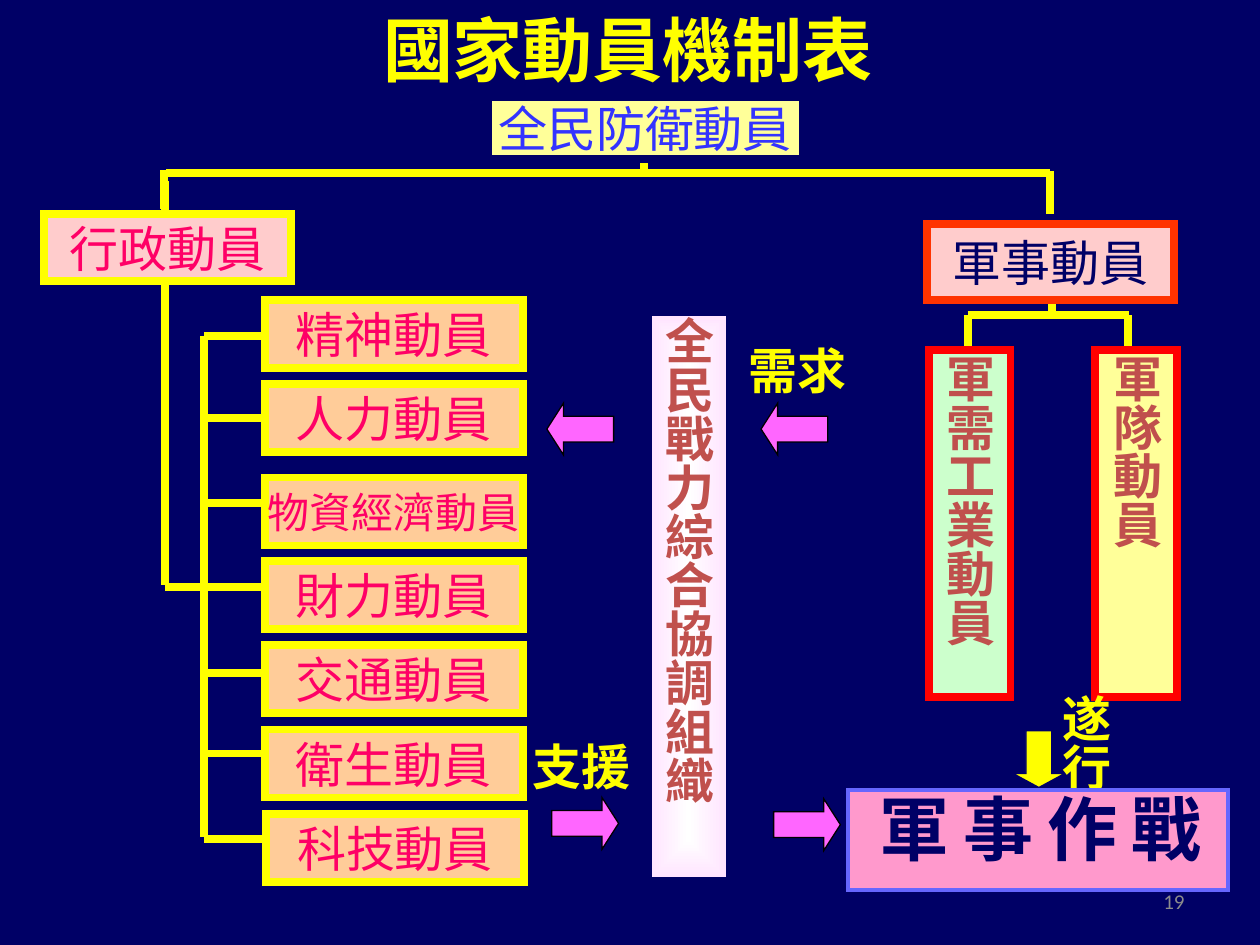
from lxml.etree import SubElement
from pptx import Presentation
from pptx.dml.color import RGBColor
from pptx.enum.shapes import MSO_CONNECTOR, MSO_SHAPE
from pptx.enum.text import MSO_ANCHOR, MSO_AUTO_SIZE, PP_ALIGN
from pptx.oxml.ns import qn
from pptx.util import Inches, Pt

# Content
TITLE = "國家動員機制表"
PAGE_NUMBER = "19"
YELLOW, NAVY, PINK, BRICK = "FFFF00", "000066", "FF0066", "C0504D"
BRANCH_SIZE = (2.05, 0.54)
SPINE_X = 1.62

# name, left, top, height of the joining line, text size
BRANCHES = [
    ("精神動員", 2.1, 2.38, 2.67, 28),
    ("人力動員", 2.1, 3.05, 3.32, 28),
    ("物資經濟動員", 2.1, 3.79, 3.99, 24),
    ("財力動員", 2.1, 4.45, None, 28),
    ("交通動員", 2.1, 5.12, 5.34, 28),
    ("衛生動員", 2.1, 5.79, 5.98, 28),
    ("科技動員", 2.11, 6.46, 6.66, 28),
]
# name, (left, top, width, height), fill, line, text colour
LEVEL_BOXES = [
    ("全民防衛動員", (3.87, 0.77, 2.5, 0.49), "FFFF99", NAVY, "3333FF"),
    ("行政動員", (0.35, 1.7, 1.96, 0.53), "FFCCCC", YELLOW, PINK),
    ("軍事動員", (7.36, 1.78, 1.96, 0.6), "FFCCCC", "FF3300", NAVY),
]
COLUMN_BOXES = [
    ("軍隊動員", (8.69, 2.78, 0.65, 2.75), "FFFF99", "FF0000", BRICK),
    ("軍需工業動員", (7.37, 2.78, 0.65, 2.75), "CCFFCC", "FF0000", BRICK),
    ("全民戰力綜合協調組織", (5.14, 2.48, 0.65, 4.51), "FFE1FF", NAVY, BRICK),
]
COMBAT = ("軍事作戰", (6.73, 6.27, 3.02, 0.79), "FF99CC", "6666FF", NAVY)
TREE_LINES = [
    (1.3, 1.66, 1.3, 1.35), (1.32, 1.37, 8.33, 1.37),
    (5.11, 1.37, 5.11, 1.1), (8.33, 1.7, 8.33, 1.36),
    (1.31, 4.64, 1.31, 1.44), (1.31, 4.66, 2.14, 4.66),
    (SPINE_X, 2.67, SPINE_X, 6.64), (8.35, 2.48, 8.35, 2.16),
    (7.68, 2.5, 8.96, 2.5), (7.68, 2.76, 7.68, 2.5), (8.95, 2.76, 8.95, 2.5),
]
# start point, box at the end, side of that box
JOINED_LINES = [(SPINE_X, 3.32, "人力動員", 1)]
LABELS = [("支援", 4.13, 5.8), ("需求", 5.84, 2.65)]
# left, top, rotation
PINK_ARROWS = [(4.38, 6.33, 0), (6.14, 6.34, 0), (4.34, 3.2, 180), (6.04, 3.2, 180)]


def color(value):
    return RGBColor.from_string(value)


def write(shape, paragraphs, size, ink, bold=False, align=PP_ALIGN.LEFT, wrap=False,
          anchor=MSO_ANCHOR.MIDDLE, tight=True, vertical=False, font="Times New Roman"):
    frame = shape.text_frame
    settings = {"word_wrap": wrap, "auto_size": MSO_AUTO_SIZE.NONE, "vertical_anchor": anchor}
    if tight:
        settings.update(margin_left=Inches(0.06), margin_right=Inches(0.06),
                        margin_top=Inches(0.03), margin_bottom=Inches(0.03))
    for name, value in settings.items():
        setattr(frame, name, value)
    if vertical:
        frame._txBody.bodyPr.set("vert", "eaVert")
    for index, text in enumerate(paragraphs):
        para = frame.add_paragraph() if index else frame.paragraphs[0]
        para.alignment = align
        span = para.add_run()
        span.text = text
        for name, value in {"size": Pt(size), "name": font, "bold": bold}.items():
            setattr(span.font, name, value)
        span.font.color.rgb = color(ink)


def add_figure(page, kind, place, fill, line, weight):
    figure = page.shapes.add_shape(kind, *map(Inches, place))
    figure.shadow.inherit = False
    figure.fill.solid()
    figure.fill.fore_color.rgb = color(fill)
    figure.line.color.rgb = color(line)
    figure.line.width = Pt(weight)
    # Sharp corners
    SubElement(figure._element.spPr.find(qn("a:ln")), qn("a:miter"), {"lim": "800000"})
    return figure


def add_line(page, *points):
    connector = page.shapes.add_connector(MSO_CONNECTOR.STRAIGHT, *map(Inches, points))
    connector.line.color.rgb = color(YELLOW)
    connector.line.width = Pt(4.5)
    SubElement(connector._element.spPr, qn("a:effectLst"))
    return connector


def add_box(page, name, place, fill, line, ink, size=28, vertical=False):
    box = add_figure(page, MSO_SHAPE.RECTANGLE, place, fill, line, 4.5)
    write(box, [name], size, ink, bold=vertical, vertical=vertical, align=PP_ALIGN.CENTER)
    return box


def glow_from_center(box, inner, outer):
    box.fill.gradient()
    for stop, position, value in zip(box.fill.gradient_stops, (0, 1), (inner, outer)):
        stop.position = position
        stop.color.rgb = color(value)
    gradient = box._element.spPr.find(qn("a:gradFill"))
    gradient.remove(gradient.find(qn("a:lin")))
    route = SubElement(gradient, qn("a:path"), {"path": "shape"})
    SubElement(route, qn("a:fillToRect"), {side: "50000" for side in "ltrb"})


def main():
    deck = Presentation()
    deck.slide_width, deck.slide_height = Inches(10), Inches(7.5)
    page = deck.slides.add_slide(deck.slide_layouts[5])
    page.background.fill.solid()
    page.background.fill.fore_color.rgb = color(NAVY)

    # Title and page number
    title = page.shapes.title
    title.left, title.top, title.width, title.height = map(Inches, (2.94, 0, 5.74, 0.77))
    write(title, [TITLE], 40, YELLOW, bold=True, wrap=True, anchor=MSO_ANCHOR.TOP, tight=False)
    number = page.shapes.add_textbox(*map(Inches, (7.17, 6.95, 2.33, 0.4)))
    write(number, [PAGE_NUMBER], 12, "8C8C8C", align=PP_ALIGN.RIGHT, wrap=True,
          tight=False, font="Calibri")

    # Tree lines, behind the boxes
    for points in TREE_LINES:
        add_line(page, *points)
    joined = {name for _, _, name, _ in JOINED_LINES}
    for name, left, _, line_y, _ in BRANCHES:
        if line_y and name not in joined:
            add_line(page, SPINE_X, line_y, left, line_y)

    # Boxes
    boxes = {}
    for name, left, top, _, size in BRANCHES:
        boxes[name] = add_box(page, name, (left, top, *BRANCH_SIZE), "FFCC99", YELLOW,
                              PINK, size=size)
    for entry in LEVEL_BOXES:
        boxes[entry[0]] = add_box(page, *entry)
    for entry in COLUMN_BOXES:
        boxes[entry[0]] = add_box(page, *entry, vertical=True)
    glow_from_center(boxes["全民戰力綜合協調組織"], "FFFFFF", "FFE1FF")

    # Lines that meet the middle of a box side
    for x, y, name, side in JOINED_LINES:
        add_line(page, x, y, x, y).end_connect(boxes[name], side)

    # Labels and arrows
    for text, left, top in LABELS:
        label = page.shapes.add_textbox(*map(Inches, (left, top, 0.98, 0.57)))
        write(label, [text], 28, YELLOW, bold=True, anchor=MSO_ANCHOR.TOP, tight=False)
    for left, top, turn in PINK_ARROWS:
        arrow = add_figure(page, MSO_SHAPE.RIGHT_ARROW, (left, top, 0.53, 0.41),
                           "FF66FF", "000000", 0.75)
        arrow.adjustments[1] = 0.32
        arrow.rotation = turn

    # Military operation: one upright column per character, read from the right
    carry_out = page.shapes.add_textbox(*map(Inches, (8.31, 5.48, 0.6, 0.94)))
    write(carry_out, ["遂行"], 28, YELLOW, bold=True, wrap=True, anchor=MSO_ANCHOR.TOP,
          vertical=True, font="Noto Sans CJK SC")
    down = add_figure(page, MSO_SHAPE.DOWN_ARROW, (8.04, 5.8, 0.41, 0.45), YELLOW, NAVY, 0.75)
    down.adjustments[1] = 0.27
    name, place, fill, line, ink = COMBAT
    combat = add_figure(page, MSO_SHAPE.RECTANGLE, place, fill, line, 2.25)
    write(combat, reversed(name), 40, ink, bold=True, vertical=True, align=PP_ALIGN.CENTER)

    deck.save("out.pptx")


if __name__ == "__main__":
    main()
